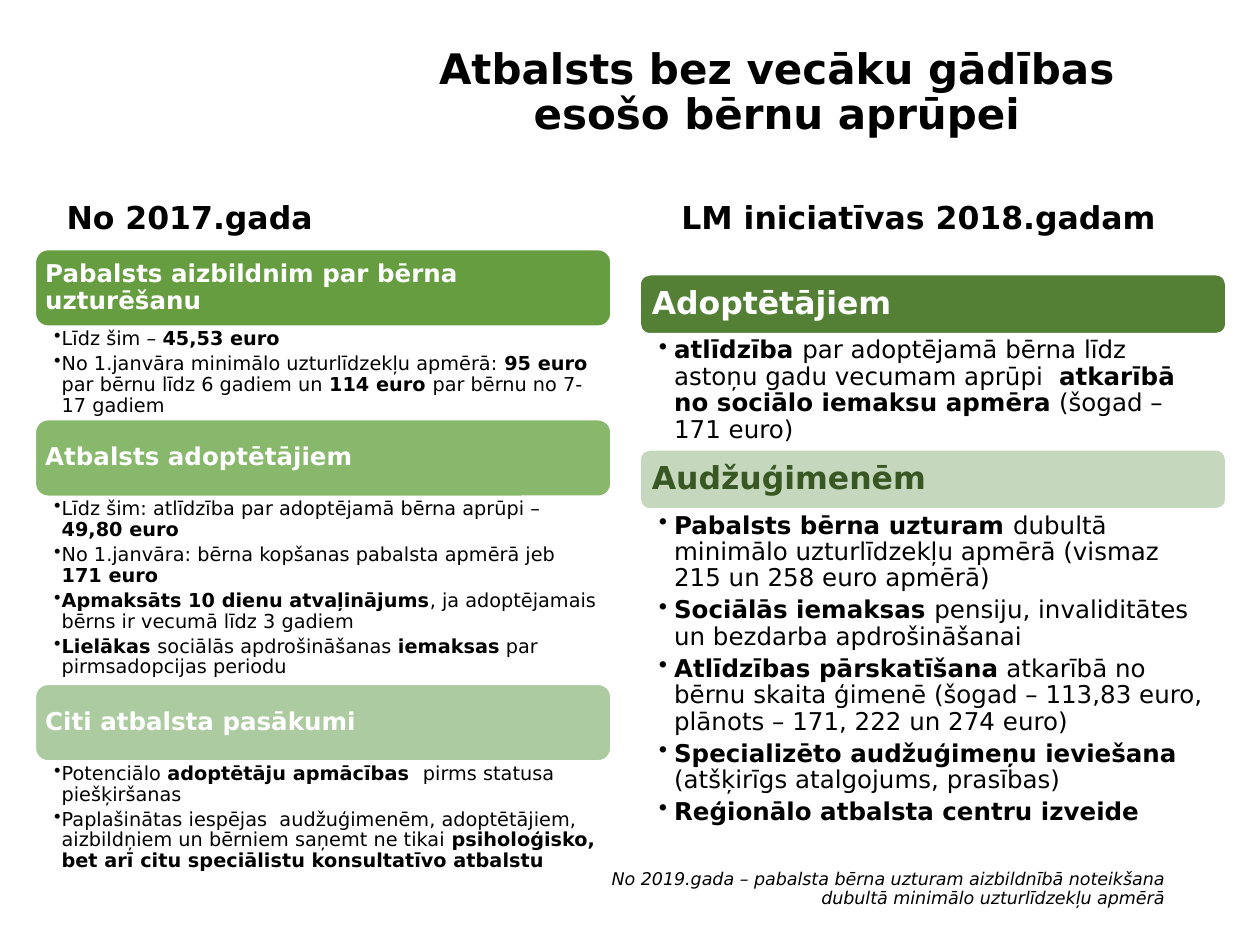
from lxml import etree
from pptx import Presentation
from pptx.dml.color import RGBColor
from pptx.enum.shapes import MSO_SHAPE
from pptx.enum.text import MSO_ANCHOR, PP_ALIGN
from pptx.oxml.ns import qn
from pptx.util import Inches, Pt

ROUND = MSO_SHAPE.ROUNDED_RECTANGLE
TOP, MIDDLE = MSO_ANCHOR.TOP, MSO_ANCHOR.MIDDLE
LEFT, CENTER, RIGHT = PP_ALIGN.LEFT, PP_ALIGN.CENTER, PP_ALIGN.RIGHT
FONT = "DejaVu Sans"
BLACK = RGBColor(0x00, 0x00, 0x00)
WHITE = RGBColor(0xFF, 0xFF, 0xFF)
FOREST = RGBColor(0x38, 0x57, 0x23)
MOSS = RGBColor(0x53, 0x80, 0x35)
GREEN = RGBColor(0x66, 0x9D, 0x40)
LEAF = RGBColor(0x87, 0xB8, 0x6B)
SAGE = RGBColor(0xAD, 0xCB, 0xA0)
MIST = RGBColor(0xC5, 0xD8, 0xBD)

PAST = [
    ("Pabalsts aizbildnim par bērna uzturēšanu", GREEN, WHITE, 0.74, [
        "Līdz šim – |45,53 euro",
        "No 1.janvāra minimālo uzturlīdzekļu apmērā: |95 euro |"
        "par bērnu līdz 6 gadiem un |114 euro |par bērnu no 7-17 gadiem",
    ]),
    ("Atbalsts adoptētājiem", LEAF, WHITE, 1.49, [
        "Līdz šim: atlīdzība par adoptējamā bērna aprūpi – |49,80 euro",
        "No 1.janvāra: bērna kopšanas pabalsta apmērā jeb |171 euro",
        "|Apmaksāts 10 dienu atvaļinājums|, ja adoptējamais bērns ir vecumā līdz 3 gadiem",
        "|Lielākas |sociālās apdrošināšanas |iemaksas| par pirmsadopcijas periodu",
    ]),
    ("Citi atbalsta pasākumi", SAGE, WHITE, 0.92, [
        "Potenciālo |adoptētāju apmācības  |pirms statusa piešķiršanas",
        "Paplašinātas iespējas  audžuģimenēm, adoptētājiem, aizbildņiem un bērniem "
        "saņemt ne tikai |psiholoģisko, bet arī citu speciālistu konsultatīvo atbalstu",
    ]),
]
PLANS = [
    ("Adoptētājiem", MOSS, WHITE, 0.92, [
        "|atlīdzība |par adoptējamā bērna līdz astoņu gadu vecumam aprūpi  |"
        "atkarībā no sociālo iemaksu apmēra| (šogad – 171 euro)",
    ]),
    ("Audžuģimenēm", MIST, FOREST, 2.61, [
        "|Pabalsts bērna uzturam |dubultā minimālo uzturlīdzekļu apmērā "
        "(vismaz 215 un 258 euro apmērā)",
        "|Sociālās iemaksas |pensiju, invaliditātes un bezdarba apdrošināšanai",
        "|Atlīdzības pārskatīšana| atkarībā no bērnu skaita ģimenē "
        "(šogad – 113,83 euro, plānots – 171, 222 un 274 euro)",
        "|Specializēto audžuģimeņu ieviešana |(atšķirīgs atalgojums, prasības)",
        "|Reģionālo atbalsta centru izveide",
    ]),
]


def set_frame(shape, pads, anchor):
    frame = shape.text_frame
    frame.word_wrap = True
    frame.vertical_anchor = anchor
    frame.margin_left, frame.margin_top, frame.margin_right, frame.margin_bottom = map(Inches, pads)
    return frame


def add_run(para, text, size, color, bold=False, italic=False):
    run = para.add_run()
    run.text = text
    font = run.font
    font.name, font.size = FONT, Pt(size)
    font.bold, font.italic = bold, italic
    font.color.rgb = color


def add_label(shapes, box, text, size, align, bold=True, italic=False):
    shape = shapes.add_textbox(*map(Inches, box))
    para = set_frame(shape, (0.1, 0.05, 0.1, 0.05), TOP).paragraphs[0]
    para.alignment = align
    para.line_spacing = 0.9
    add_run(para, text, size, BLACK, bold, italic)


def add_bar(shapes, box, text, fill, color, size, pad):
    bar = shapes.add_shape(ROUND, *map(Inches, box))
    bar.shadow.inherit = False
    bar.fill.solid()
    bar.fill.fore_color.rgb = fill
    bar.line.color.rgb = WHITE
    bar.line.width = Pt(1)
    para = set_frame(bar, (pad,) * 4, MIDDLE).paragraphs[0]
    para.alignment = LEFT
    para.line_spacing = 0.9
    add_run(para, text, size, color, True)


def add_list(shapes, box, items, size, pads, indent):
    frame = set_frame(shapes.add_textbox(*map(Inches, box)), pads, TOP)
    for i, item in enumerate(items):
        para = frame.add_paragraph() if i else frame.paragraphs[0]
        para.level = 1
        para.line_spacing = 0.9
        para.space_after = Pt(size * 0.22)
        props = para._p.get_or_add_pPr()
        props.set("marL", str(Inches(indent)))
        props.set("indent", str(-Inches(indent)))
        etree.SubElement(props, qn("a:buChar")).set("char", "•")
        for j, part in enumerate(item.split("|")):
            if part:
                add_run(para, part, size, BLACK, j % 2 == 1)


def add_stack(slide, left, top, width, height, parts, sizes, pad, pads, indent):
    shapes = slide.shapes.add_group_shape().shapes
    for head, fill, color, depth, items in parts:
        add_bar(shapes, (left, top, width, height), head, fill, color, sizes[0], pad)
        top += height
        add_list(shapes, (left, top, width, depth), items, sizes[1], pads, indent)
        top += depth


def main():
    deck = Presentation()
    deck.slide_width, deck.slide_height = Inches(10), Inches(7.5)
    slide = deck.slides.add_slide(deck.slide_layouts[6])
    shapes = slide.shapes
    add_label(shapes, (2.83, 0.33, 6.67, 1.17),
              "Atbalsts bez vecāku gādības esošo bērnu aprūpei", 24, CENTER)
    add_stack(slide, 0.28, 1.98, 4.57, 0.61, PAST, (14, 11), 0.05,
              (0.15, 0.02, 0.11, 0.02), 0.06)
    add_stack(slide, 5.08, 2.18, 4.65, 0.47, PLANS, (18, 14), 0.07,
              (0.15, 0.03, 0.14, 0.03), 0.12)
    add_label(shapes, (0.43, 1.56, 3.17, 0.59), "No 2017.gada", 18, LEFT)
    add_label(shapes, (5.31, 1.56, 4.33, 0.42), "LM iniciatīvas 2018.gadam", 18, LEFT)
    add_label(shapes, (4.69, 6.86, 4.65, 0.55),
              "No 2019.gada – pabalsta bērna uzturam aizbildnībā noteikšana "
              "dubultā minimālo uzturlīdzekļu apmērā", 10, RIGHT, False, True)
    deck.save("out.pptx")


if __name__ == "__main__":
    main()
